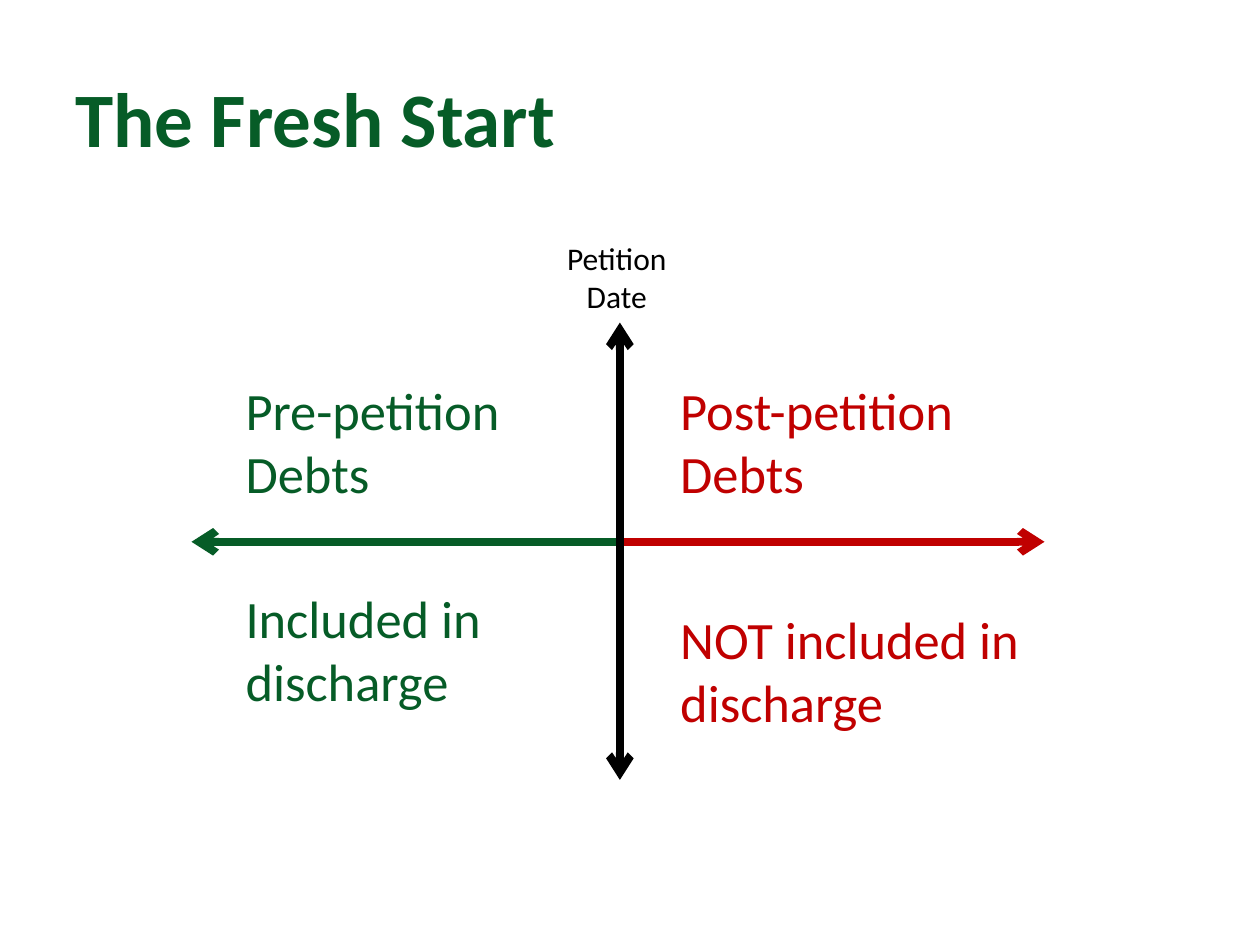
from lxml.etree import SubElement
from pptx import Presentation
from pptx.dml.color import RGBColor
from pptx.enum.shapes import MSO_CONNECTOR
from pptx.enum.text import MSO_ANCHOR, PP_ALIGN
from pptx.oxml.ns import qn
from pptx.util import Inches, Pt

COLORS = {"pre": "065C27", "post": "C00000", "axis": "000000"}
FONT = "Calibri"
CENTER_X, CENTER_Y = 4.92, 4.3
LEFT_X, RIGHT_X = 1.85, 5.3
TOP_Y, LABEL_H = 2.95, 1.11

TITLE = ("The Fresh Start", (0.5, 0.3, 9, 1.25), 44, "pre")
DATE_LABEL = ("Petition Date", (4.25, 1.85, 1.29, 0.71), 18, "axis")
DEBT_LABELS = [
    ("Pre-petition Debts", (LEFT_X, TOP_Y, 2.42, LABEL_H), 30, "pre"),
    ("Post-petition Debts", (RIGHT_X, TOP_Y, 2.67, LABEL_H), 30, "post"),
    ("Included in discharge", (LEFT_X, 4.6, 2.79, LABEL_H), 30, "pre"),
    ("NOT included in discharge", (RIGHT_X, 4.77, 2.99, LABEL_H), 30, "post"),
]
ARROWS = [
    ((CENTER_X, CENTER_Y), (8.29, CENTER_Y), "post", ["tailEnd"]),
    ((CENTER_X, CENTER_Y), (1.52, CENTER_Y), "pre", ["tailEnd"]),
    ((CENTER_X, 2.56), (CENTER_X, 6.19), "axis", ["headEnd", "tailEnd"]),
]


def add_text(slide, text, box, size, color, bold=False,
             align=PP_ALIGN.LEFT, anchor=MSO_ANCHOR.TOP):
    tf = slide.shapes.add_textbox(*map(Inches, box)).text_frame
    tf.word_wrap = True
    tf.vertical_anchor = anchor
    p = tf.paragraphs[0]
    p.alignment = align
    r = p.add_run()
    r.text = text
    r.font.name = FONT
    r.font.size = Pt(size)
    r.font.bold = bold
    r.font.color.rgb = RGBColor.from_string(COLORS[color])


def add_arrow(slide, start, end, color, heads):
    line = slide.shapes.add_connector(
        MSO_CONNECTOR.STRAIGHT, *map(Inches, start + end))
    line.line.width = Pt(4.5)
    line.line.color.rgb = RGBColor.from_string(COLORS[color])
    ln = line.line._get_or_add_ln()
    for head in heads:
        SubElement(ln, qn(f"a:{head}"), type="arrow")
    SubElement(line._element.spPr, qn("a:effectLst"))


def main():
    prs = Presentation()
    prs.slide_width, prs.slide_height = Inches(10), Inches(7.5)
    slide = prs.slides.add_slide(prs.slide_layouts[6])
    add_text(slide, *TITLE, bold=True, anchor=MSO_ANCHOR.MIDDLE)
    for arrow in ARROWS:
        add_arrow(slide, *arrow)
    for label in DEBT_LABELS:
        add_text(slide, *label)
    add_text(slide, *DATE_LABEL, align=PP_ALIGN.CENTER)
    prs.save("out.pptx")


if __name__ == "__main__":
    main()
